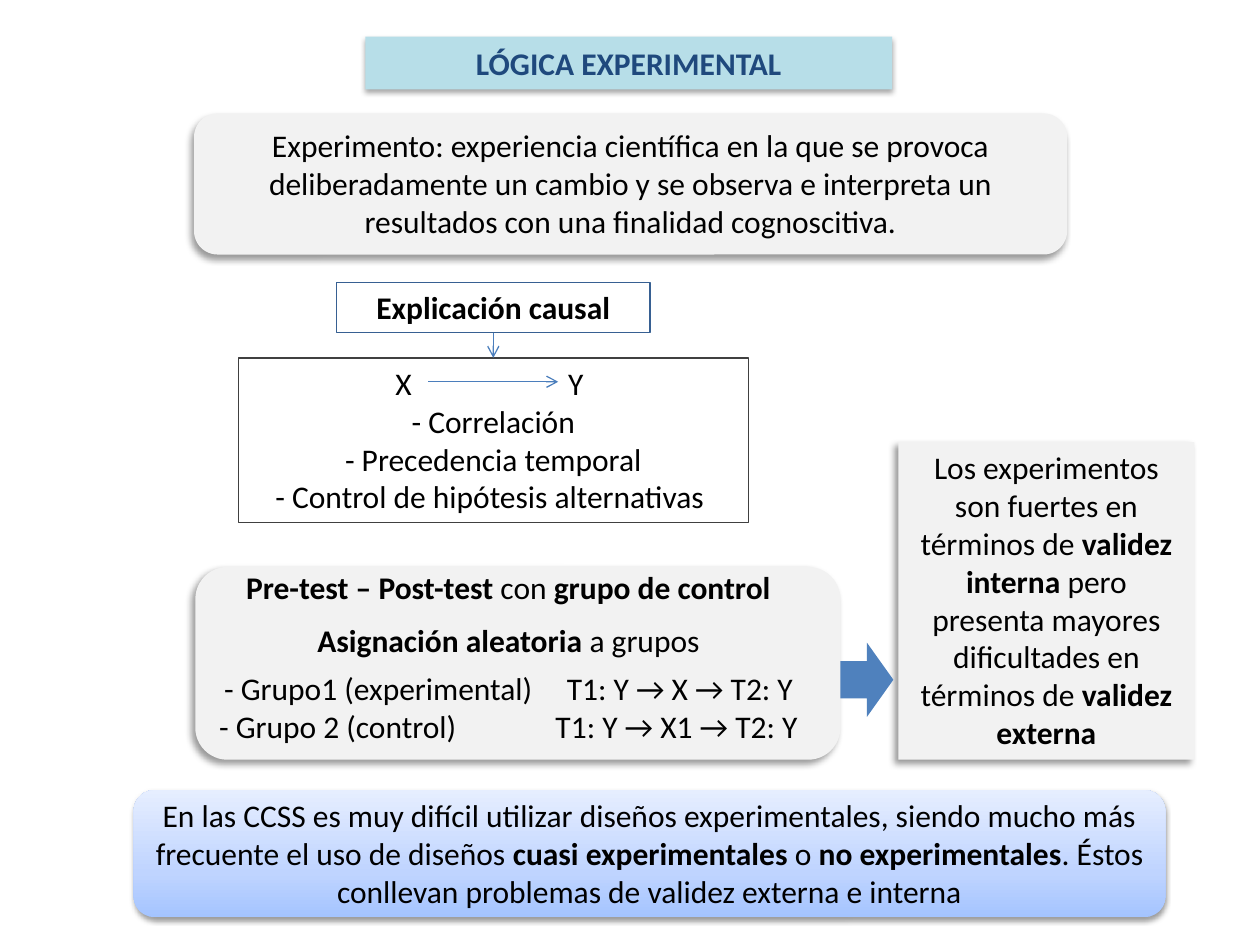
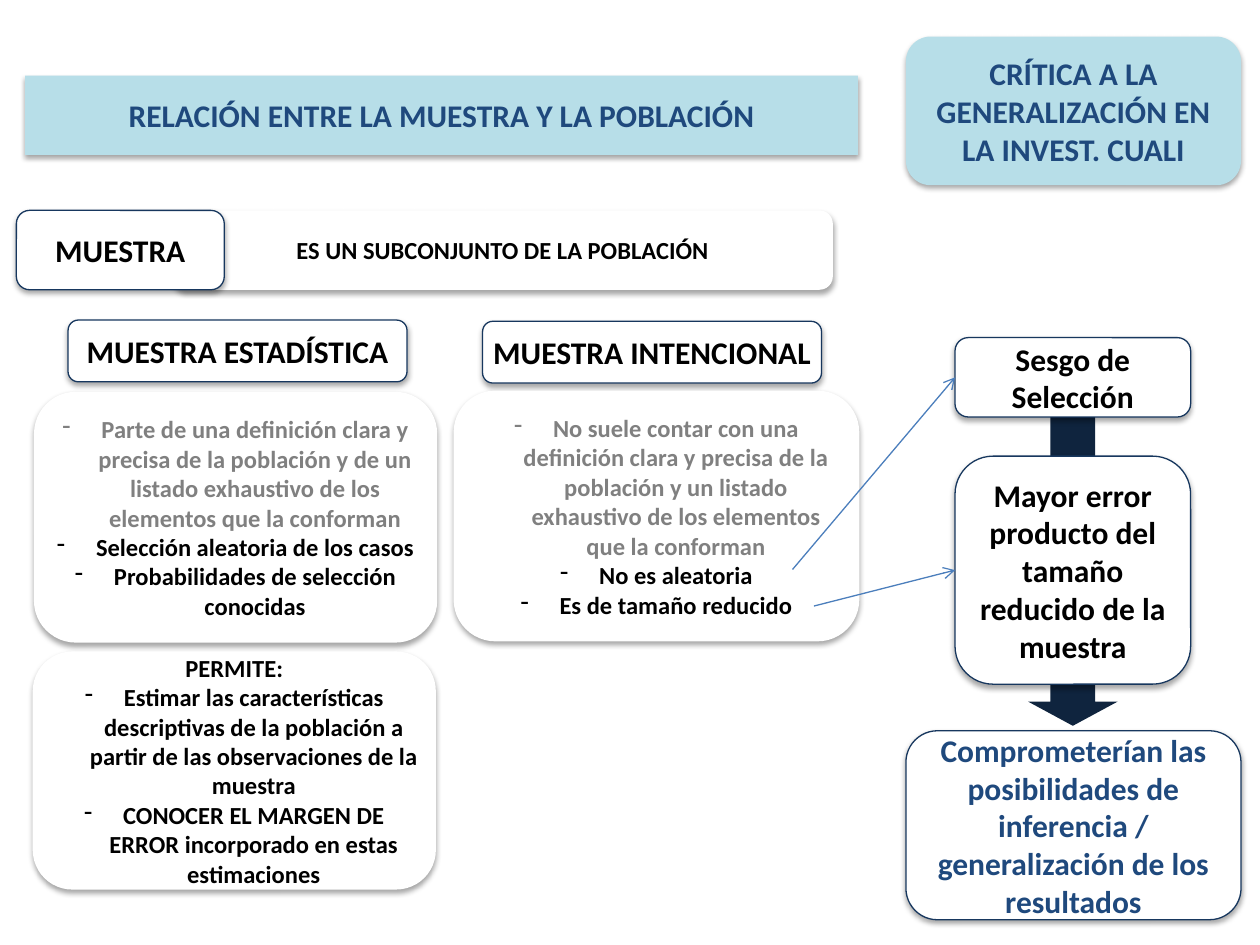
from lxml import etree
from pptx import Presentation
from pptx import util as u
from pptx.dml.color import RGBColor
from pptx.enum import shapes, text
from pptx.oxml.ns import qn

# Shared style
C = {"band": "B7DEE8", "navy": "1F497D", "edge": "17375E", "panel": "F2F2F2",
     "white": "FFFFFF", "black": "000000", "muted": "808080", "arrow": "4F81BD",
     "link": "4B7EBC", "dark": "0F243E", "frame": "376092", "grey": "404040"}
GRADIENT = [(0, "A4C4FF"), (35, "BFD4FF"), (100, "E6EEFF")]
FONT = "Calibri"
SOFT = (35, 3.1, 1.8, 90)      # shadow: opacity %, blur pt, distance pt, angle
CAST = (40, 4, 3, 135)
WASH = (38, 3.1, 1.6, 90)
S = shapes.MSO_SHAPE
BAND = dict(fill="band", shadow=SOFT, color="navy", bold=True)
CARD = dict(fill="white", shadow=SOFT, bold=True)
LABEL = dict(CARD, line="edge")
PANEL = dict(fill="panel", shadow=CAST, anchor="t")
PLAIN = dict(anchor="t", kind=S.RECTANGLE)

# Content, slide 1: ** switches bold on and off
TITLE_1 = "LÓGICA EXPERIMENTAL"
EXPERIMENT = ["Experimento: experiencia científica en la que se provoca deliberadamente "
              "un cambio y se observa e interpreta un resultados con una finalidad "
              "cognoscitiva."]
SOCIAL = ["En las CCSS es muy difícil utilizar diseños experimentales, siendo mucho más "
          "frecuente el uso de diseños **cuasi experimentales **o **no experimentales**. "
          "Éstos conllevan problemas de validez externa e interna"]
PRETEST = ["**Pre-test – Post-test **con **grupo de control**"]
GROUPS = ["**Asignación aleatoria **a grupos",
          {"t": "\t- Grupo1 (experimental)\tT1: Y → X → T2: Y", "tabs": (0.49, 3.21),
           "before": 6},
          {"t": "\t- Grupo 2 (control)\tT1: Y → X1 → T2: Y", "tabs": (0.45, 3.12)}]
VALIDITY = ["Los experimentos son fuertes en términos de **validez interna** pero presenta "
            "mayores dificultades en términos de **validez externa**"]
CAUSAL = ["Explicación causal"]
CONDITIONS = [{"t": "\tX\tY", "tabs": (1.15, 2.52)}, "- Correlación",
              "- Precedencia temporal", "- Control de hipótesis alternativas "]

# Content, slide 2
TITLE_2 = "RELACIÓN ENTRE LA MUESTRA Y LA POBLACIÓN"
STATISTICAL = [
    {"t": "Parte de una definición clara y precisa de la población y de un listado "
          "exhaustivo de los elementos que la conforman", "bullet": True, "color": "muted"},
    {"t": "Selección aleatoria de los casos", "bullet": True},
    {"t": "Probabilidades de selección conocidas", "bullet": True}]
ALLOWS = [
    "PERMITE:",
    {"t": "Estimar las características descriptivas de la población a partir de las "
          "observaciones de la muestra", "bullet": True},
    {"t": "CONOCER EL MARGEN DE ERROR incorporado en estas estimaciones", "bullet": True}]
INTENTIONAL = [
    {"t": "No suele contar con una definición clara y precisa de la población y un listado "
          "exhaustivo de los elementos que la conforman", "bullet": True, "color": "muted"},
    {"t": "No es aleatoria", "bullet": True},
    {"t": "Es de tamaño reducido", "bullet": True}]
# Text, position, style
SAMPLE_BOXES = [
    (["CRÍTICA A LA GENERALIZACIÓN EN LA INVEST. CUALI"], (7.19, 0.29, 2.66, 1.18), BAND),
    (["ES UN SUBCONJUNTO DE LA POBLACIÓN"], (1.37, 1.67, 5.24, 0.63), dict(CARD, size=14)),
    (STATISTICAL, (0.27, 3.11, 3.2, 1.99), dict(CARD, size=14, inset=(0.04, 0.04))),
    (ALLOWS, (0.26, 5.17, 3.2, 1.89), dict(CARD, size=14, inset=(0.04, 0.04))),
    (["MUESTRA"], (0.13, 1.67, 1.65, 0.63), LABEL),
    (["MUESTRA ESTADÍSTICA"], (0.54, 2.54, 2.69, 0.49), LABEL),
    (["MUESTRA INTENCIONAL"], (3.83, 2.55, 2.69, 0.49), dict(LABEL, inset=(0.04, 0.05))),
    (INTENTIONAL, (3.6, 3.1, 3.22, 1.99), dict(CARD, size=14)),
]
RISKS = [  # text, position, start of the arrow that reaches it
    (["Sesgo de Selección"], (7.58, 2.68, 1.87, 0.63), (6.29, 4.52)),
    (["Mayor error producto del tamaño reducido de la muestra"],
     (7.58, 3.62, 1.87, 1.81), (6.46, 4.81)),
]
OUTCOME = ["Comprometerían las posibilidades de inferencia / generalización de los resultados"]


def rgb(name):
    return RGBColor.from_string(C[name])


def inches(values):
    return [u.Inches(v) for v in values]


def sub(parent, tag, **attrs):
    return etree.SubElement(parent, qn(tag), {k: str(v) for k, v in attrs.items()})


def add_shadow(sp, alpha, blur, dist, angle):
    effects = sp._element.spPr.find(qn("a:effectLst"))
    shadow = sub(effects, "a:outerShdw", blurRad=u.Pt(blur), dist=u.Pt(dist),
                 dir=angle * 60000, rotWithShape=0)
    sub(sub(shadow, "a:srgbClr", val=C["black"]), "a:alpha", val=alpha * 1000)


def add_gradient(sp):
    grad = etree.Element(qn("a:gradFill"), rotWithShape="1")
    stops = sub(grad, "a:gsLst")
    for pos, color in GRADIENT:
        sub(sub(stops, "a:gs", pos=pos * 1000), "a:srgbClr", val=color)
    sub(grad, "a:lin", ang=270 * 60000, scaled=0)
    sp._element.spPr.find(qn("a:prstGeom")).addnext(grad)


def write(sp, paras, size=18, color="black", bold=False, anchor="m", inset=(0.1, 0.05)):
    tf = sp.text_frame
    tf.word_wrap = True
    tf.auto_size = text.MSO_AUTO_SIZE.NONE
    tf.vertical_anchor = (text.MSO_ANCHOR.MIDDLE if anchor == "m" else text.MSO_ANCHOR.TOP)
    tf.margin_left = tf.margin_right = u.Inches(inset[0])
    tf.margin_top = tf.margin_bottom = u.Inches(inset[1])
    for i, item in enumerate(paras):
        item = item if isinstance(item, dict) else {"t": item}
        p = tf.paragraphs[0] if i == 0 else tf.add_paragraph()
        p.alignment = text.PP_ALIGN.LEFT if "tabs" in item else text.PP_ALIGN.CENTER
        p.space_before = u.Pt(item.get("before", 0))
        pPr = p._p.get_or_add_pPr()
        if item.get("bullet"):
            pPr.set("marL", str(u.Inches(0.31)))
            pPr.set("indent", str(-u.Inches(0.31)))
            sub(pPr, "a:buFontTx")
            sub(pPr, "a:buChar", char="-")
        if "tabs" in item:
            tabs = sub(pPr, "a:tabLst")
            for pos in item["tabs"]:
                sub(tabs, "a:tab", pos=u.Inches(pos), algn="l")
        for n, part in enumerate(item["t"].split("**")):
            if part:
                r = p.add_run()
                r.text = part
                r.font.name, r.font.size = FONT, u.Pt(size)
                r.font.bold = bold or n % 2 == 1
                r.font.color.rgb = rgb(item.get("color", color))


def paint(sp, fill=None, line=None, shadow=None):
    if fill == "gradient":
        add_gradient(sp)
    elif fill:
        sp.fill.solid()
        sp.fill.fore_color.rgb = rgb(fill)
    else:
        sp.fill.background()
    if line:
        sp.line.color.rgb = rgb(line)
        sp.line.width = u.Pt(0.75)
    else:
        sp.line.fill.background()
    sp.shadow.inherit = False
    if shadow:
        add_shadow(sp, *shadow)


def box(slide, paras, at, kind=S.ROUNDED_RECTANGLE, fill=None, line=None, shadow=None,
        **style):
    sp = slide.shapes.add_shape(kind, *inches(at))
    paint(sp, fill, line, shadow)
    if paras:
        write(sp, paras, **style)
    return sp


def label(slide, paras, at):
    write(slide.shapes.add_textbox(*inches(at)), paras, anchor="t")


def arrow(slide, start, end, begin=None, target=None):
    """Thin arrow; begin and target are (shape, side) pairs to join."""
    cn = slide.shapes.add_connector(shapes.MSO_CONNECTOR.STRAIGHT, *inches(start + end))
    if begin:
        cn.begin_connect(*begin)
    if target:
        cn.end_connect(*target)
    cn.line.color.rgb = rgb("link")
    cn.line.width = u.Pt(0.75)
    sub(cn.line._get_or_add_ln(), "a:tailEnd", type="arrow")
    sub(cn._element.spPr, "a:effectLst")


def new_slide(prs, title, at):
    """Title-only slide whose title sits in a rounded band."""
    slide = prs.slides.add_slide(prs.slide_layouts[5])
    sp = slide.shapes.title
    sp.left, sp.top, sp.width, sp.height = inches(at)
    sub(sub(sp._element.spPr, "a:prstGeom", prst="roundRect"), "a:avLst")
    paint(sp, BAND["fill"], shadow=BAND["shadow"])
    write(sp, [title], color=BAND["color"], bold=True)
    return slide


def build_logic(prs):
    s = new_slide(prs, TITLE_1, (2.9, 0.29, 4.18, 0.42))
    box(s, EXPERIMENT, (1.54, 0.9, 6.93, 1.12), **PANEL)
    box(s, SOCIAL, (1.06, 6.27, 8.19, 1.01), fill="gradient", shadow=WASH, anchor="t",
        inset=(0, 0))
    # Control group design and its validity
    box(s, None, (1.55, 4.5, 5.12, 1.53), fill="panel", shadow=CAST)
    label(s, GROUPS, (1.19, 4.88, 5.69, 1.09))
    label(s, PRETEST, (1.42, 4.46, 5.23, 0.4))
    box(s, VALIDITY, (7.13, 3.51, 2.35, 2.52), kind=S.RECTANGLE, **PANEL)
    box(s, None, (6.67, 5.1, 0.42, 0.59), kind=S.RIGHT_ARROW, fill="arrow")
    # Causal explanation
    cause = box(s, CAUSAL, (2.67, 2.24, 2.49, 0.4), line="frame", bold=True, **PLAIN)
    terms = box(s, CONDITIONS, (1.89, 2.84, 4.05, 1.31), fill="white", line="grey", **PLAIN)
    arrow(s, (3.91, 2.64), (3.91, 2.84), (cause, 2), (terms, 0))
    arrow(s, (3.4, 3.03), (4.43, 3.03))


def build_sample(prs):
    s = new_slide(prs, TITLE_2, (0.2, 0.6, 6.61, 0.63))
    # Down arrow behind the risks, then the outcome
    down = box(s, None, (8.16, 3.27, 0.71, 2.49), kind=S.DOWN_ARROW, fill="dark")
    down.adjustments[0], down.adjustments[1] = 0.5, 0.27
    box(s, OUTCOME, (7.19, 5.8, 2.66, 1.5), **dict(LABEL, color="navy"))
    # Sample types
    for paras, at, style in SAMPLE_BOXES:
        box(s, paras, at, **style)
    # Risks and the arrows that lead to them
    risks = [(box(s, paras, at, **LABEL), at, start) for paras, at, start in RISKS]
    for sp, (left, top, _, height), start in risks:
        arrow(s, start, (left, top + height / 2), target=(sp, 1))


def main():
    prs = Presentation()
    prs.slide_width, prs.slide_height = u.Inches(10), u.Inches(7.5)
    build_logic(prs)
    build_sample(prs)
    prs.save("out.pptx")


if __name__ == "__main__":
    main()
